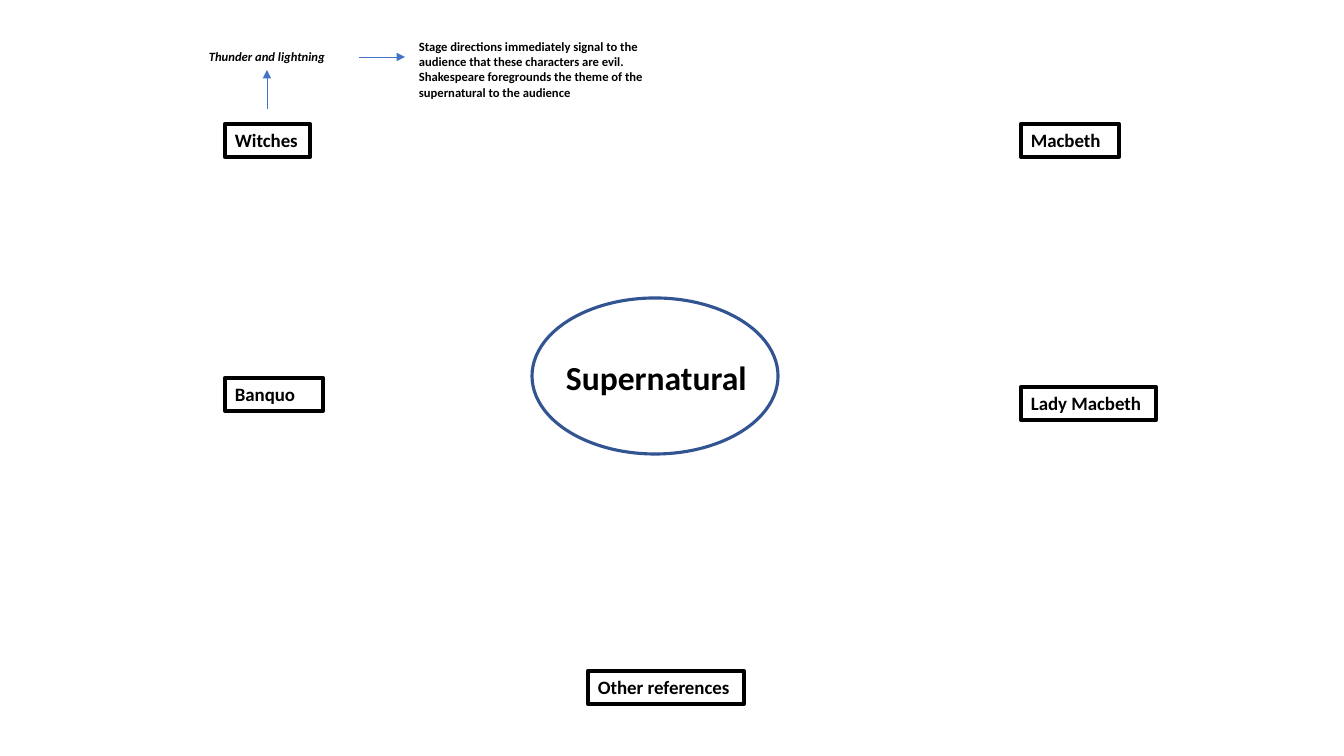
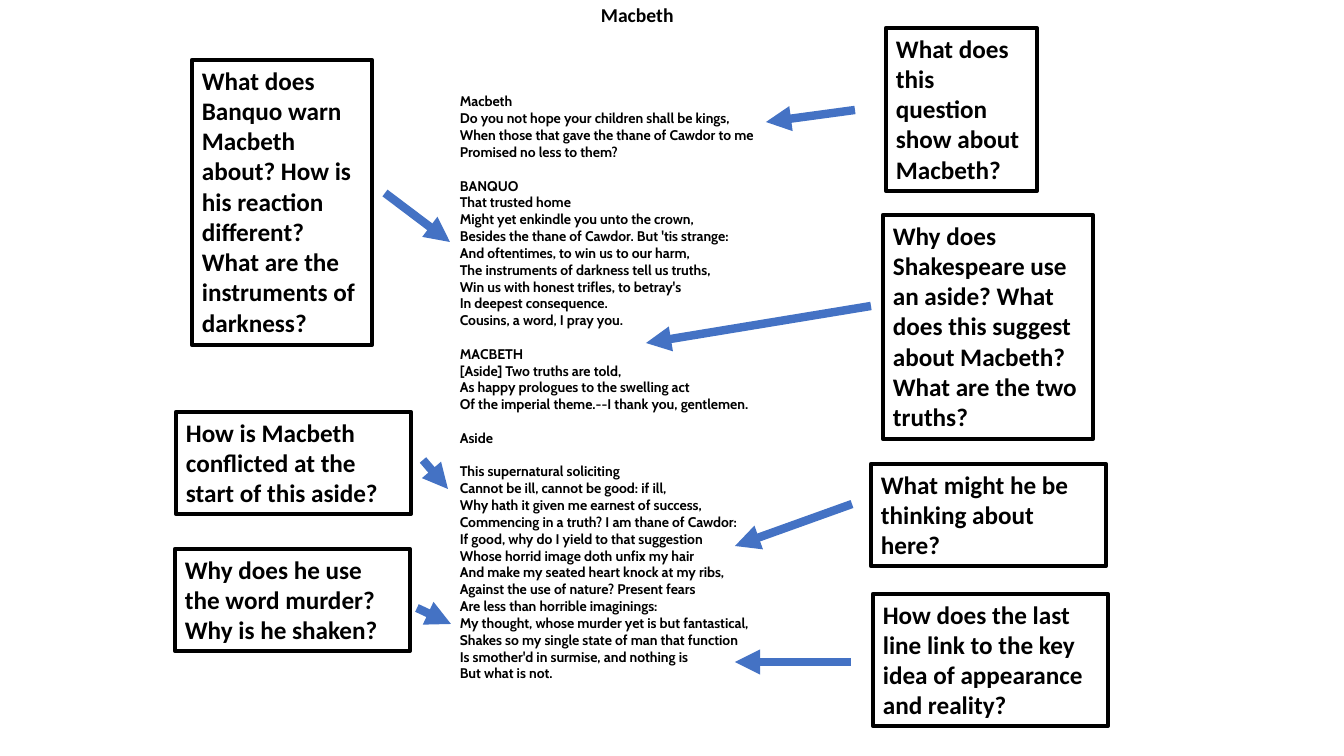
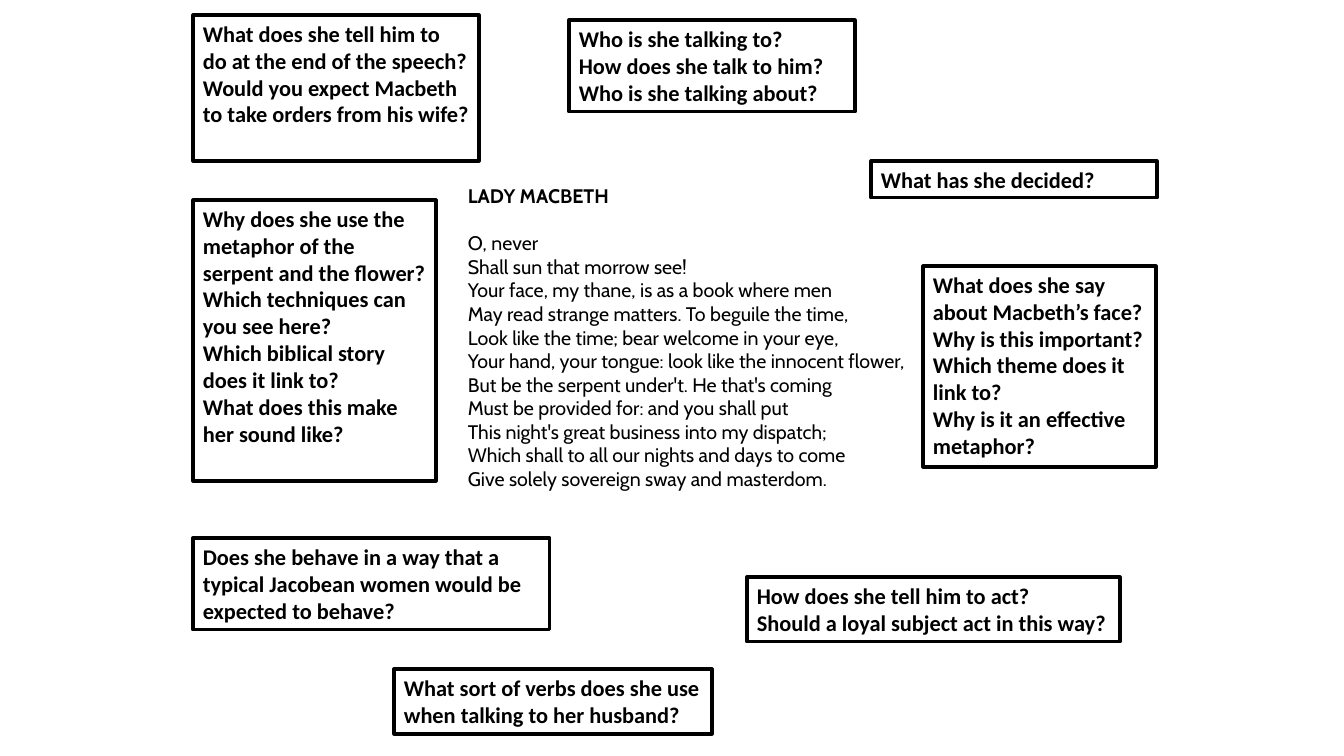
from lxml import etree
from pptx import Presentation
from pptx import util as u
from pptx.dml.color import RGBColor
from pptx.enum import shapes, text
from pptx.oxml.ns import qn

PX = 914400 / 100.8
WIDTH, HEIGHT = 1344, 756

COLOURS = {"ink": "000000", "paper": "FFFFFF", "arrow": "4472C4", "ellipse": "325491"}


def text_format(size, name="Calibri", bold=True, italic=False):
    return {"size": u.Pt(size), "name": name, "bold": bold, "italic": italic}


FORMATS = {
    "topic": text_format(24),
    "label": text_format(13.5),
    "note": text_format(9),
    "quote": text_format(9, italic=True),
    "heading": text_format(14),
    "question": text_format(18),
    "prompt": text_format(16),
    "scene": text_format(10, "Cabin"),
    "speaker": text_format(14, "Cabin"),
    "speech": text_format(14, "Cabin", bold=False),
}

# Slide 1: mind map. Every box is (left, top, width, height)
TOPIC_ELLIPSE = (532, 298, 246, 156)
MAP_TEXTS = [
    ("Supernatural", (556, 352, 221, 50), "topic"),
    ("Thunder and lightning", (199, 44, 165, 25), "quote"),
    ("Stage directions immediately signal to the audience that these characters are evil. "
     "Shakespeare foregrounds the theme of the supernatural to the audience",
     (409, 34, 250, 72), "note"),
]
LABEL_HEIGHT = 33
MAP_LABELS = [  # name, left, top, width
    ("Witches", 225, 124, 85),
    ("Macbeth", 1021, 124, 98),
    ("Banquo", 225, 378, 98),
    ("Lady Macbeth", 1021, 387, 135),
    ("Other references", 588, 671, 156),
]
MAP_ARROWS = [((267, 109), (267, 70)), ((359, 57), (405, 57))]

# Slide 2: Macbeth and Banquo
SCENE_HEADING = ("Macbeth", (591, -2, 111, 34))
SCENE_BOX = (450, 88, 504, 605)
SCENE = [
    ["Macbeth",
     "Do you not hope your children shall be kings,",
     "When those that gave the thane of Cawdor to me",
     "Promised no less to them?"],
    ["BANQUO",
     "That trusted home",
     "Might yet enkindle you unto the crown,",
     "Besides the thane of Cawdor. But 'tis strange:",
     "And oftentimes, to win us to our harm,",
     "The instruments of darkness tell us truths,",
     "Win us with honest trifles, to betray's",
     "In deepest consequence.",
     "Cousins, a word, I pray you."],
    ["MACBETH",
     "[Aside] Two truths are told,",
     "As happy prologues to the swelling act",
     "Of the imperial theme.--I thank you, gentlemen."],
    ["Aside"],
    ["This supernatural soliciting",
     "Cannot be ill, cannot be good: if ill,",
     "Why hath it given me earnest of success,",
     "Commencing in a truth? I am thane of Cawdor:",
     "If good, why do I yield to that suggestion",
     "Whose horrid image doth unfix my hair",
     "And make my seated heart knock at my ribs,",
     "Against the use of nature? Present fears",
     "Are less than horrible imaginings:",
     "My thought, whose murder yet is but fantastical,",
     "Shakes so my single state of man that function",
     "Is smother'd in surmise, and nothing is",
     "But what is not."],
]
SCENE_QUESTIONS = [  # question, box, arrow
    ("What does this question show about Macbeth?",
     (886, 28, 151, 163), ((855, 110), (766, 122))),
    ("What does Banquo warn Macbeth about? How is his reaction different? "
     "What are the instruments of darkness?",
     (192, 60, 180, 285), ((385, 193), (450, 242))),
    ("Why does Shakespeare use an aside? What does this suggest about Macbeth? "
     "What are the two truths?",
     (883, 215, 210, 224), ((871, 306), (646, 343))),
    ("How is Macbeth conflicted at the start of this aside?",
     (176, 412, 235, 102), ((423, 460), (448, 489))),
    ("What might he be thinking about here?",
     (871, 464, 235, 102), ((852, 504), (735, 546))),
    ("Why does he use the word murder? Why is he shaken?",
     (175, 549, 235, 102), ((417, 608), (451, 624))),
    ("How does the last line link to the key idea of appearance and reality?",
     (873, 594, 235, 132), ((851, 662), (735, 662))),
]

# Slide 3: Lady Macbeth
SPEECH_BOX = (458, 179, 516, 319)
SPEECH = [
    ["LADY MACBETH"],
    ["O, never",
     "Shall sun that morrow see!",
     "Your face, my thane, is as a book where men",
     "May read strange matters. To beguile the time,",
     "Look like the time; bear welcome in your eye,",
     "Your hand, your tongue: look like the innocent flower,",
     "But be the serpent under't. He that's coming",
     "Must be provided for: and you shall put",
     "This night's great business into my dispatch;",
     "Which shall to all our nights and days to come",
     "Give solely sovereign sway and masterdom."],
]
SPEECH_PROMPTS = [
    (["Who is she talking to?", "How does she talk to him?", "Who is she talking about?"],
     (569, 20, 286, 92)),
    (["What has she decided?"], (871, 161, 286, 37)),
    (["Does she behave in a way that a typical Jacobean women would be expected to behave?"],
     (193, 538, 357, 92)),
    (["Why does she use the metaphor of the serpent and the flower?",
      "Which techniques can you see here?",
      "Which biblical story does it link to?",
      "What does this make her sound like?"], (193, 200, 243, 281)),
    (["What does she tell him to do at the end of the speech?",
      "Would you expect Macbeth to take orders from his wife?"], (193, 15, 286, 146)),
    (["What does she say about Macbeth’s face?",
      "Why is this important?",
      "Which theme does it link to?",
      "Why is it an effective metaphor?"], (923, 266, 233, 201)),
    (["What sort of verbs does she use when talking to her husband?"], (394, 669, 318, 65)),
    (["How does she tell him to act?", "Should a loyal subject act in this way?"],
     (747, 577, 373, 65)),
]


def px(*values):
    return [u.Emu(round(value * PX)) for value in values]


def set_line(line, colour, weight):
    line.color.rgb = RGBColor.from_string(COLOURS[colour])
    line.width = u.Pt(weight)


def add_text(slide, stanzas, box, styles, gap=0, border=None):
    """Write stanzas of lines, one style per stanza, with a gap between stanzas."""
    shape = slide.shapes.add_textbox(*px(*box))
    if border:
        set_line(shape.line, "ink", border)
    frame = shape.text_frame
    frame.word_wrap = True
    frame.vertical_anchor = text.MSO_ANCHOR.TOP
    frame.text = "\n".join(line for stanza in stanzas for line in stanza)
    paragraphs = iter(frame.paragraphs)
    for number, (stanza, style) in enumerate(zip(stanzas, styles)):
        for position in range(len(stanza)):
            paragraph = next(paragraphs)
            if number and position == 0:
                paragraph.space_before = u.Pt(gap)
            font = paragraph.runs[0].font
            for attribute, value in FORMATS[style].items():
                setattr(font, attribute, value)
            font.color.rgb = RGBColor.from_string(COLOURS["ink"])
    return shape


def add_arrow(slide, start, end, weight):
    arrow = slide.shapes.add_connector(shapes.MSO_CONNECTOR.STRAIGHT, *px(*start, *end))
    set_line(arrow.line, "arrow", weight)
    properties = arrow._element.spPr
    etree.SubElement(properties.find(qn("a:ln")), qn("a:tailEnd"), type="triangle")
    etree.SubElement(properties, qn("a:effectLst"))


def build_map(slide):
    ellipse = slide.shapes.add_shape(shapes.MSO_SHAPE.OVAL, *px(*TOPIC_ELLIPSE))
    ellipse.shadow.inherit = False
    ellipse.fill.solid()
    ellipse.fill.fore_color.rgb = RGBColor.from_string(COLOURS["paper"])
    set_line(ellipse.line, "ellipse", 2.25)
    for words, box, style in MAP_TEXTS:
        add_text(slide, [[words]], box, [style])
    for name, left, top, width in MAP_LABELS:
        add_text(slide, [[name]], (left, top, width, LABEL_HEIGHT), ["label"], border=3)
    for start, end in MAP_ARROWS:
        add_arrow(slide, start, end, 0.5)


def build_scene(slide):
    add_text(slide, SCENE, SCENE_BOX, ["scene"] * len(SCENE), gap=12)
    heading, heading_box = SCENE_HEADING
    add_text(slide, [[heading]], heading_box, ["heading"])
    for question, box, (start, end) in SCENE_QUESTIONS:
        add_text(slide, [[question]], box, ["question"], border=3)
        add_arrow(slide, start, end, 6)


def build_speech(slide):
    add_text(slide, SPEECH, SPEECH_BOX, ["speaker", "speech"], gap=17)
    for prompts, box in SPEECH_PROMPTS:
        add_text(slide, [prompts], box, ["prompt"], border=2.25)


def main():
    presentation = Presentation()
    presentation.slide_width, presentation.slide_height = px(WIDTH, HEIGHT)
    for build in (build_map, build_scene, build_speech):
        build(presentation.slides.add_slide(presentation.slide_layouts[6]))
    presentation.save("out.pptx")


if __name__ == "__main__":
    main()
